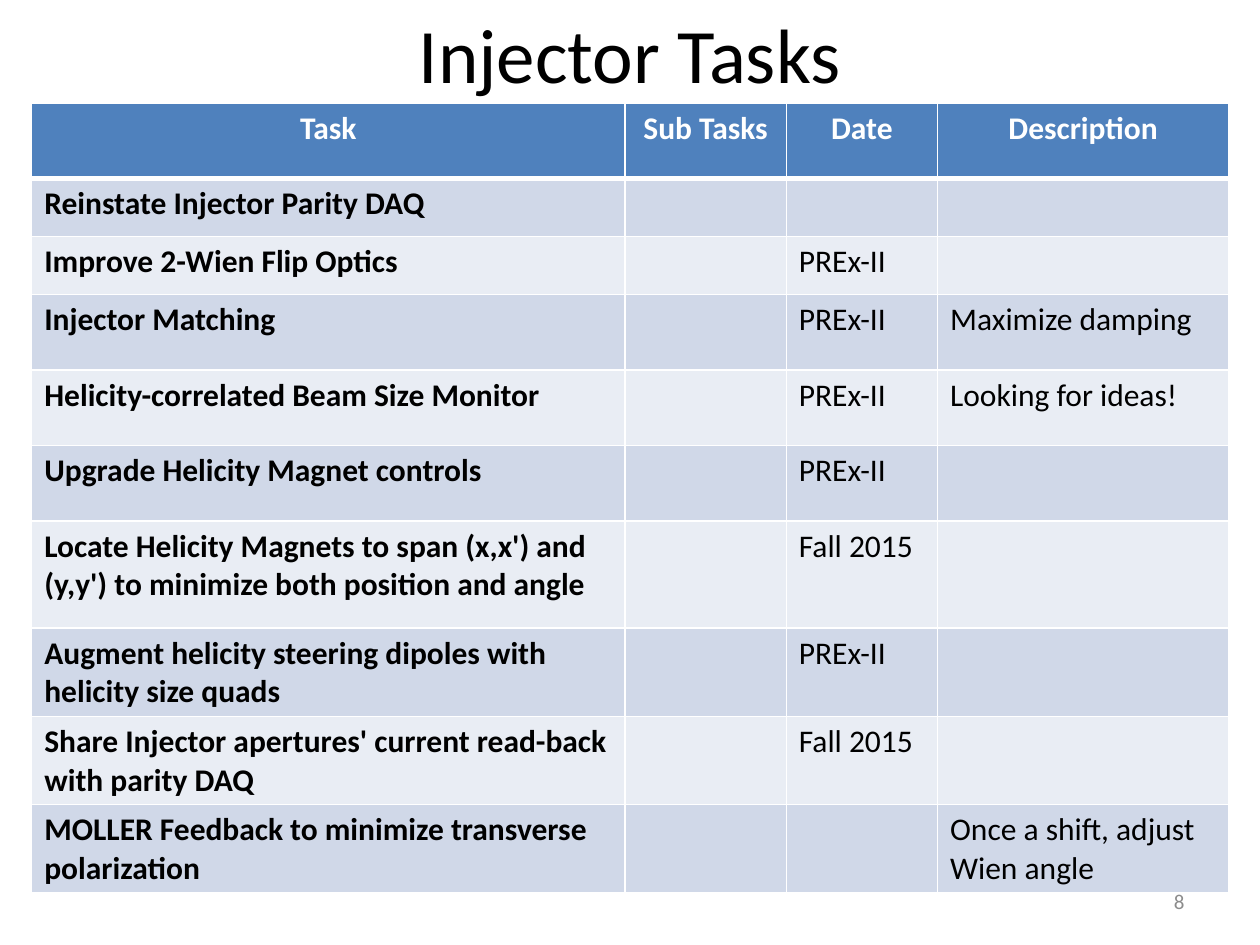
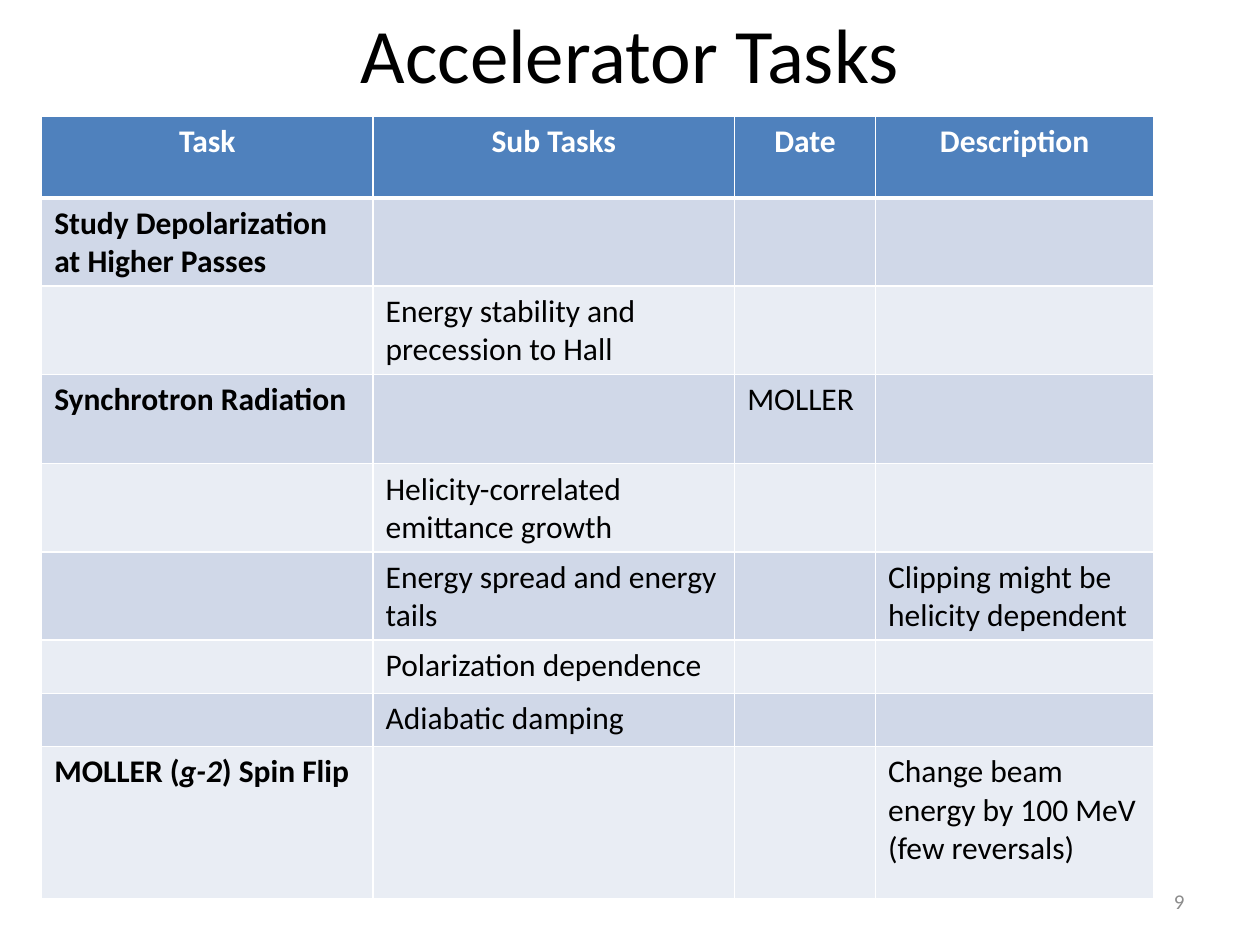
from lxml.etree import SubElement
from pptx import Presentation
from pptx.dml.color import RGBColor as RGB
from pptx.enum.text import MSO_ANCHOR as Anchor, PP_ALIGN as Align
from pptx.oxml.ns import qn
from pptx.util import Cm, Pt

COLORS = {
    "text": "000000",
    "white": "FFFFFF",
    "header": "4F81BD",
    "dark_band": "D0D8E8",
    "light_band": "E9EDF4",
    "number": "8C8C8C",
}
FONT = "Calibri"
HEADINGS = ["Task", "Sub Tasks", "Date", "Description"]

INJECTOR_TASKS = [
    (1.17, ["Reinstate Injector Parity DAQ", "", "", ""]),
    (1.17, ["Improve 2-Wien Flip Optics", "", "PREx-II", ""]),
    (1.52, ["Injector Matching", "", "PREx-II", "Maximize damping"]),
    (1.52, ["Helicity-correlated Beam Size Monitor", "", "PREx-II", "Looking for ideas!"]),
    (1.52, ["Upgrade Helicity Magnet controls", "", "PREx-II", ""]),
    (2.16, ["Locate Helicity Magnets to span (x,x') and (y,y') to minimize both position and angle",
            "", "Fall 2015", ""]),
    (1.52, ["Augment helicity steering dipoles with helicity size quads", "", "PREx-II", ""]),
    (1.52, ["Share Injector apertures' current read-back with parity DAQ", "", "Fall 2015", ""]),
    (1.52, ["MOLLER Feedback to minimize transverse polarization", "", "",
            "Once a shift, adjust Wien angle"]),
]

ACCELERATOR_TASKS = [
    (1.65, ["Study Depolarization at Higher Passes", "", "", ""]),
    (1.65, ["", "Energy stability and precession to Hall", "", ""]),
    (1.8, ["Synchrotron Radiation", "", "MOLLER", ""]),
    (1.07, ["", "Helicity-correlated emittance growth", "", ""]),
    (1.65, ["", "Energy spread and energy tails", "", "Clipping might be helicity dependent"]),
    (1.07, ["", "Polarization dependence", "", ""]),
    (1.07, ["", "Adiabatic damping", "", ""]),
    (3.07, ["MOLLER (*g-2*) Spin Flip", "", "",
            "Change beam energy by 100 MeV\n(few reversals)"]),
]


class Deck:
    def __init__(self):
        self.prs = Presentation()
        self.prs.slide_width, self.prs.slide_height = Cm(25.4), Cm(19.05)
        self.s = None

    def slide(self, title):
        self.s = self.prs.slides.add_slide(self.prs.slide_layouts[6])
        self.text(title, 1.27, 0, 22.86, 2.11, 44, "text", Align.CENTER)

    def add_runs(self, tf, text, size, color, align, bold=False):
        for i, line in enumerate(text.split("\n")):
            p = tf.paragraphs[0] if i == 0 else tf.add_paragraph()
            p.alignment = align
            p.font.size = Pt(size)
            for j, part in enumerate(line.split("*")):
                if not part:
                    continue
                r = p.add_run()
                r.text = part
                r.font.name, r.font.size = FONT, Pt(size)
                r.font.bold, r.font.italic = bold, j % 2 == 1
                r.font.color.rgb = RGB.from_string(COLORS[color])

    def text(self, text, x, y, w, h, size, color, align):
        sp = self.s.shapes.add_textbox(Cm(x), Cm(y), Cm(w), Cm(h))
        tf = sp.text_frame
        tf.word_wrap = True
        tf.vertical_anchor = Anchor.MIDDLE
        self.add_runs(tf, text, size, color, align)

    def borders(self, cell, row):
        tcPr = cell._tc.get_or_add_tcPr()
        thick = {(0, "lnB"), (1, "lnT")}
        for side in ("lnL", "lnR", "lnT", "lnB"):
            width = Pt(3 if (row, side) in thick else 1)
            ln = SubElement(tcPr, qn(f"a:{side}"), w=str(width))
            fill = SubElement(ln, qn("a:solidFill"))
            SubElement(fill, qn("a:srgbClr"), val=COLORS["white"])

    def table(self, x, y, widths, header_height, tasks):
        rows = [(header_height, HEADINGS)] + tasks
        total = sum(h for h, _ in rows)
        table = self.s.shapes.add_table(len(rows), len(widths), Cm(x), Cm(y),
                                        Cm(sum(widths)), Cm(total)).table
        for col, width in zip(table.columns, widths):
            col.width = Cm(width)
        for i, (height, texts) in enumerate(rows):
            table.rows[i].height = Cm(height)
            band = "header" if i == 0 else "dark_band" if i % 2 else "light_band"
            for j, text in enumerate(texts):
                cell = table.cell(i, j)
                self.borders(cell, i)
                cell.fill.solid()
                cell.fill.fore_color.rgb = RGB.from_string(COLORS[band])
                self.add_runs(cell.text_frame, text, 18,
                              "text" if i else "white",
                              Align.LEFT if i else Align.CENTER,
                              bold=i == 0 or j == 0)

    def page_number(self, number):
        self.text(str(number), 18.21, 17.65, 5.92, 1.02, 12, "number", Align.RIGHT)


def main():
    deck = Deck()
    deck.slide("Injector Tasks")
    deck.table(0.64, 2.08, [11.96, 3.25, 3.05, 5.87], 1.52, INJECTOR_TASKS)
    deck.page_number(8)

    deck.slide("Accelerator Tasks")
    deck.table(0.84, 2.34, [6.68, 7.29, 2.84, 5.61], 1.65, ACCELERATOR_TASKS)
    deck.page_number(9)

    deck.prs.save("out.pptx")


if __name__ == "__main__":
    main()
